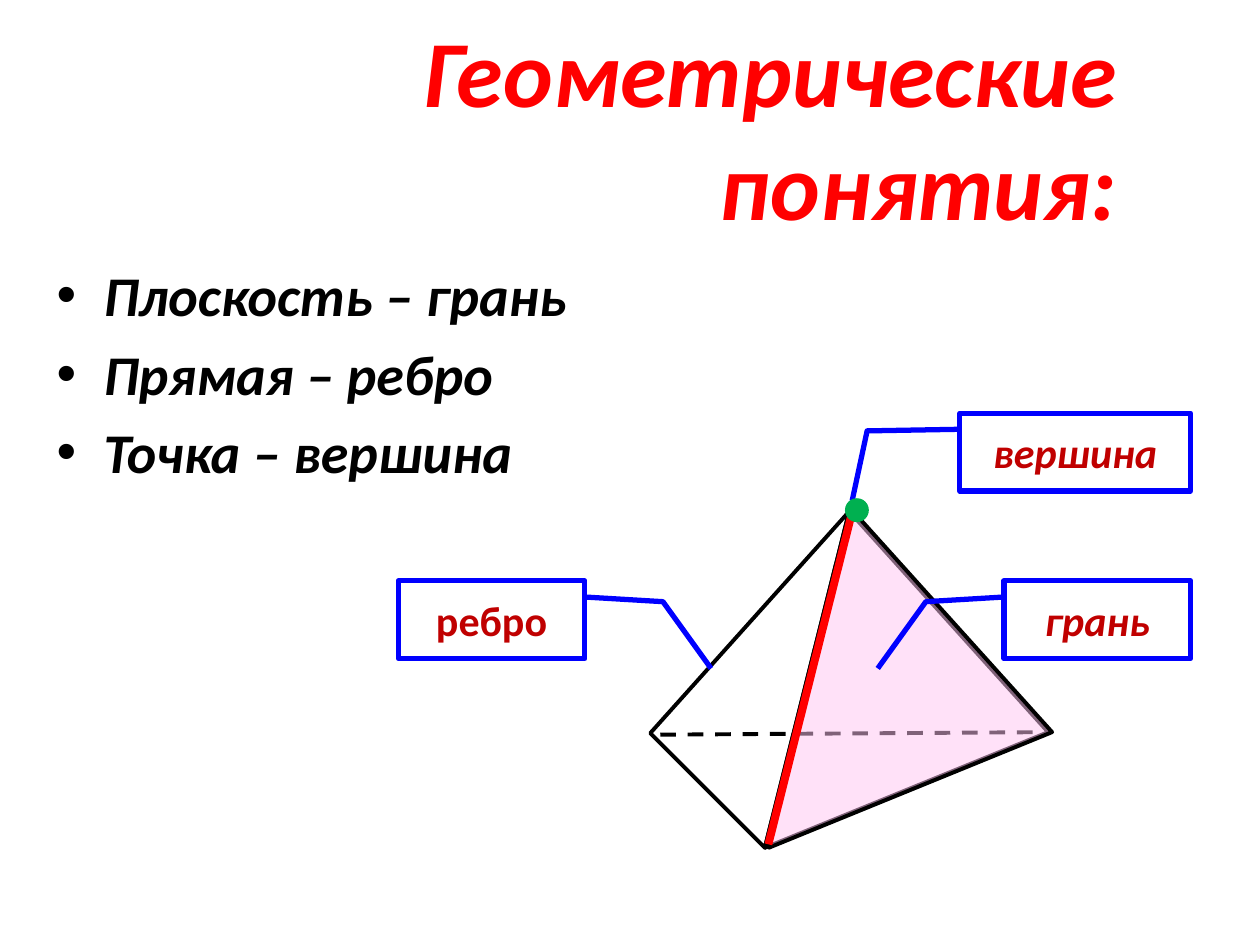
from dataclasses import dataclass
from typing import Any

from lxml.etree import SubElement
from pptx import Presentation
from pptx.dml.color import RGBColor
from pptx.enum.dml import MSO_LINE
from pptx.enum.shapes import MSO_CONNECTOR, MSO_SHAPE
from pptx.enum.text import MSO_ANCHOR, PP_ALIGN
from pptx.oxml.ns import qn
from pptx.util import Cm, Pt

COLORS = {
    "title": "FF0000",
    "text": "000000",
    "outline": "000000",
    "face": "FFC5F3",
    "edge": "FF0000",
    "vertex": "00B050",
    "callout": "0000FF",
    "callout_fill": "FFFFFF",
    "label": "C00000",
}


@dataclass
class GeometrySlide:
    slide: Any
    font_name: str = "Calibri"

    def color(self, name):
        return RGBColor.from_string(COLORS[name])

    def format_text(self, paragraph, size, color, align, italic=True):
        paragraph.alignment = align
        font = paragraph.font
        font.name, font.size = self.font_name, Pt(size)
        font.bold, font.italic = True, italic
        font.color.rgb = self.color(color)

    def format_line(self, shape, color, width):
        shape.line.color.rgb = self.color(color)
        shape.line.width = Pt(width)

    def format_fill(self, shape, color):
        shape.fill.solid()
        shape.fill.fore_color.rgb = self.color(color)

    def title(self, text, left, top, width, height):
        shape = self.slide.shapes.title
        shape.left, shape.top = Cm(left), Cm(top)
        shape.width, shape.height = Cm(width), Cm(height)
        frame = shape.text_frame
        frame.text = text
        frame.word_wrap = True
        frame.margin_right = Cm(1.2)
        frame.vertical_anchor = MSO_ANCHOR.MIDDLE
        self.format_text(frame.paragraphs[0], 54, "title", PP_ALIGN.RIGHT)

    def bullets(self, items, left, top, width, height):
        shape = self.slide.shapes.add_textbox(Cm(left), Cm(top), Cm(width), Cm(height))
        frame = shape.text_frame
        frame.word_wrap = True
        frame.text = "\n".join(items)
        for paragraph in frame.paragraphs:
            self.format_text(paragraph, 32, "text", PP_ALIGN.LEFT)
            paragraph.space_before = Pt(6.4)
            properties = paragraph._p.get_or_add_pPr()
            properties.set("marL", str(Cm(0.95)))
            properties.set("indent", str(Cm(-0.95)))
            bullet_font = SubElement(properties, qn("a:buFont"))
            bullet_font.set("typeface", "Arial")
            bullet = SubElement(properties, qn("a:buChar"))
            bullet.set("char", "•")
            properties.append(properties.find(qn("a:defRPr")))

    def line(self, start, end, color, width, dash=None):
        points = [Cm(value) for value in (*start, *end)]
        connector = self.slide.shapes.add_connector(MSO_CONNECTOR.STRAIGHT, *points)
        self.format_line(connector, color, width)
        connector.line.dash_style = dash
        SubElement(connector._element.spPr, qn("a:effectLst"))

    def triangle(self, corners, fill=None, opacity=50):
        first, *rest = [(Cm(x), Cm(y)) for x, y in corners]
        builder = self.slide.shapes.build_freeform(*first)
        builder.add_line_segments(rest, close=True)
        shape = builder.convert_to_shape()
        shape.shadow.inherit = False
        self.format_line(shape, "outline", 2.25)
        if fill is None:
            shape.fill.background()
            return
        self.format_fill(shape, fill)
        color = shape._element.spPr.find(qn("a:solidFill"))[0]
        SubElement(color, qn("a:alpha")).set("val", str(opacity * 1000))

    def callout(self, text, left, top, width, pointer, italic=True):
        shape = self.slide.shapes.add_shape(
            MSO_SHAPE.LINE_CALLOUT_2, Cm(left), Cm(top), Cm(width), Cm(1.57))
        for index, value in enumerate(pointer):
            shape.adjustments[index] = value
        shape.shadow.inherit = False
        self.format_fill(shape, "callout_fill")
        self.format_line(shape, "callout", 3)
        frame = shape.text_frame
        frame.text = text
        frame.vertical_anchor = MSO_ANCHOR.MIDDLE
        self.format_text(frame.paragraphs[0], 24, "label", PP_ALIGN.CENTER, italic)

    def dot(self, left, top, size, color):
        shape = self.slide.shapes.add_shape(
            MSO_SHAPE.FLOWCHART_CONNECTOR, Cm(left), Cm(top), Cm(size), Cm(size))
        shape.shadow.inherit = False
        self.format_fill(shape, color)
        self.format_line(shape, color, 2)


def main():
    presentation = Presentation()
    presentation.slide_width, presentation.slide_height = Cm(25.4), Cm(19.05)
    layout = presentation.slide_layouts.get_by_name("Title Only")
    page = GeometrySlide(presentation.slides.add_slide(layout))

    page.title("Геометрические\vпонятия:", 5.69, 0.74, 18.03, 3.61)
    page.bullets(["Плоскость – грань", "Прямая – ребро", "Точка – вершина"],
                 0.89, 5.13, 11.63, 5.08)

    apex, front = (17.12, 10.31), (15.42, 17.09)
    left_corner, right_corner = (13.11, 14.78), (21.13, 14.76)
    right_face = [front, apex, right_corner]
    page.line((13.31, 14.81), (20.93, 14.76), "outline", 2.25, MSO_LINE.DASH)
    page.triangle([left_corner, front, apex])
    page.triangle(right_face)
    page.triangle([(x + 0.08, y) for x, y in right_face], "face")
    page.line((17.15, 10.44), (15.49, 17.02), "edge", 4.5)

    to_left = [0.207, 0.009, 0.268, -0.419, 1.125, -0.677]
    to_right = [1 - value if index % 2 else value for index, value in enumerate(to_left)]
    page.callout("вершина", 19.35, 8.33, 4.65,
                 [0.207, 0.009, 0.228, -0.402, 1.125, -0.467])
    page.callout("грань", 20.24, 11.71, 3.76, to_left)
    page.callout("ребро", 8.03, 11.71, 3.76, to_right, italic=False)
    page.dot(17.07, 10.08, 0.41, "vertex")

    presentation.save("out.pptx")


if __name__ == "__main__":
    main()
